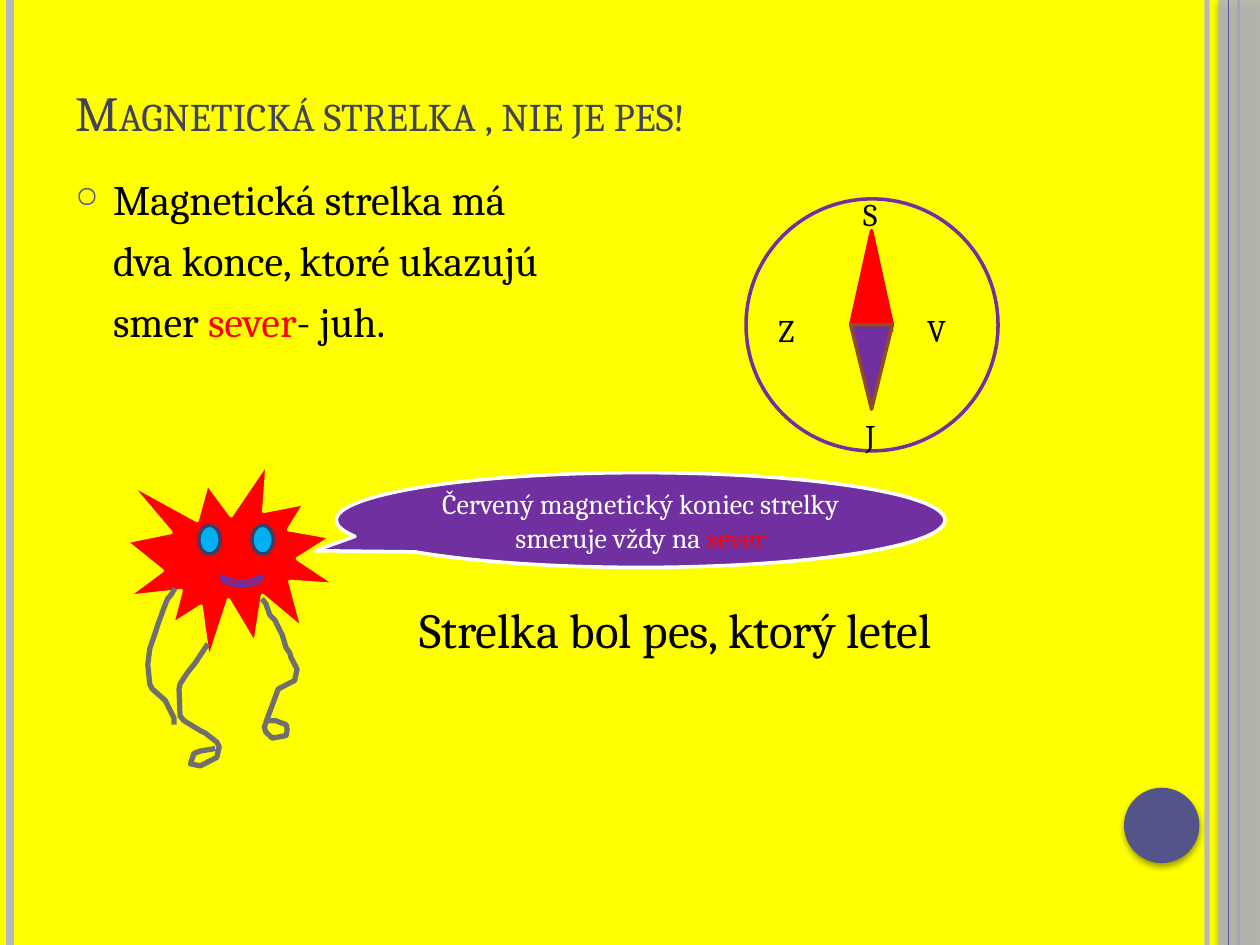
from dataclasses import dataclass

from lxml.etree import SubElement
from pptx import Presentation
from pptx.dml.color import RGBColor as Rgb
from pptx.enum.shapes import MSO_CONNECTOR as Connector, MSO_SHAPE as Shape
from pptx.enum.text import MSO_ANCHOR as Anchor, PP_ALIGN as Align
from pptx.oxml.ns import qn
from pptx.util import Cm, Pt


@dataclass(frozen=True)
class Theme:
    font: str = "Cambria"
    page: str = "FFFF00"
    ink: str = "000000"
    title: str = "424456"
    white: str = "FFFFFF"
    red: str = "FF0000"
    purple: str = "7030A0"
    brown: str = "934C22"
    rail: str = "B3B4C4"
    accent: str = "53548A"
    spark: str = "505188"
    eye: str = "00B0F0"
    eye_rim: str = "3D3E66"
    limb: str = "6F6F6F"
    title_size: int = 28
    body_size: int = 24
    label_size: int = 18
    speech_size: int = 16
    outline: float = 2


THEME = Theme()

LEFT_ARM = [
    (3.53, 11.86), (3.45, 11.99), (3.38, 12.07), (3.3, 12.27), (3.18, 12.6),
    (3.15, 12.7), (3.02, 13.08), (2.98, 13.4), (3.02, 13.79), (3.07, 13.89),
    (3.25, 14.05), (3.33, 14.12), (3.38, 14.22), (3.51, 14.48), (3.51, 14.61),
]
MIDDLE_LEG = [
    (4.19, 12.98), (4.06, 13.18), (3.94, 13.36), (3.78, 13.56), (3.63, 13.79),
    (3.61, 13.89), (3.63, 14.43), (3.71, 14.53), (4.04, 14.73), (4.14, 14.78),
    (4.27, 14.88), (4.37, 14.96), (4.42, 15.06), (4.37, 15.27), (4.04, 15.44),
    (3.84, 15.4), (3.91, 15.19), (4.04, 15.14), (4.34, 15.09),
]
RIGHT_ARM = [
    (5.28, 12.07), (5.36, 12.17), (5.44, 12.4), (5.54, 12.5), (5.69, 12.8),
    (5.77, 13.06), (5.84, 13.16), (5.87, 13.26), (5.99, 13.49), (5.94, 13.72),
    (5.84, 13.77), (5.61, 13.89), (5.41, 14.43), (5.33, 14.66), (5.36, 14.76),
    (5.49, 14.88), (5.77, 14.83), (5.79, 14.71), (5.77, 14.61), (5.56, 14.53),
    (5.33, 14.53),
]


def apply(target, formats):
    for name, value in formats.items():
        setattr(target, name, value)


def paint(figure, fill=None, line=None, width=THEME.outline):
    figure.shadow.inherit = False
    for part, colour in ((figure.fill, fill), (figure.line.fill, line)):
        if colour:
            part.solid()
            part.fore_color.rgb = Rgb.from_string(colour)
        else:
            part.background()
    if line:
        figure.line.width = Pt(width)


def add_figure(slide, kind, box, adjustments=(), **colours):
    figure = slide.shapes.add_shape(kind, *map(Cm, box))
    for index, value in enumerate(adjustments):
        figure.adjustments[index] = value
    paint(figure, **colours)
    return figure


def set_alpha(figure, percent):
    colour = figure.find(".//" + qn("a:srgbClr"))
    SubElement(colour, qn("a:alpha"), val=str(percent * 1000))


def add_shadow(figure):
    effects = figure._element.spPr.find(qn("a:effectLst"))
    shadow = SubElement(effects, qn("a:outerShdw"), blurRad=str(Pt(4)),
                        dist=str(Pt(2)), dir="5400000", rotWithShape="0")
    colour = SubElement(shadow, qn("a:srgbClr"), val=THEME.ink)
    SubElement(colour, qn("a:alpha"), val="38000")


def add_line(slide, start, end, colour, width):
    line = slide.shapes.add_connector(Connector.STRAIGHT, *map(Cm, start + end))
    line.line.color.rgb = Rgb.from_string(colour)
    line.line.width = Pt(width)
    SubElement(line._element.spPr, qn("a:effectLst"))
    return line


def add_limb(slide, points):
    start, *rest = [(Cm(x), Cm(y)) for x, y in points]
    builder = slide.shapes.build_freeform(*start)
    builder.add_line_segments(rest, close=False)
    paint(builder.convert_to_shape(), line=THEME.limb, width=3)


def add_run(paragraph, text, size, colour=THEME.ink):
    run = paragraph.add_run()
    run.text = text
    apply(run.font, {"name": THEME.font, "size": Pt(size)})
    run.font.color.rgb = Rgb.from_string(colour)
    return run


def add_text(slide, box, text, size, colour=THEME.ink, anchor=Anchor.TOP):
    frame = slide.shapes.add_textbox(*map(Cm, box)).text_frame
    apply(frame, {"word_wrap": True, "vertical_anchor": anchor})
    return add_run(frame.paragraphs[0], text, size, colour)


def add_bullet(properties):
    colour = SubElement(properties, qn("a:buClr"))
    SubElement(colour, qn("a:srgbClr"), val=THEME.accent)
    SubElement(properties, qn("a:buSzPct"), val="70000")
    SubElement(properties, qn("a:buChar"), char="○")


def add_frame(slide):
    for x, colour, width in ((24.33, THEME.rail, 3), (0.2, THEME.rail, 4.5),
                             (24.97, THEME.accent, 1.5)):
        rail = add_line(slide, (x, 0), (x, 19.05), colour, width)
        if width == 3:
            set_alpha(rail._element, 93)
    strip = add_figure(slide, Shape.RECTANGLE, (24.56, 0, 0.84, 19.05), fill=THEME.rail)
    set_alpha(strip._element, 87)
    add_shadow(strip)
    add_line(slide, (24.77, 0), (24.77, 19.05), THEME.accent, 0.75)
    add_shadow(add_figure(slide, Shape.OVAL, (22.66, 15.88, 1.52, 1.52), fill=THEME.accent))


def add_lesson(slide):
    heading = add_text(slide, (1.27, 0.76, 22.86, 2.21), "Magnetická strelka , nie je pes!",
                       THEME.title_size, THEME.title, Anchor.BOTTOM)
    heading.font._element.set("cap", "small")

    frame = slide.shapes.add_textbox(*map(Cm, (1.27, 3.38, 22.86, 13.64))).text_frame
    frame.word_wrap = True
    lines = (
        [("Magnetická strelka má", THEME.ink)],
        [("dva konce, ktoré ukazujú", THEME.ink)],
        [("smer ", THEME.ink), ("sever", THEME.red), ("- juh.", THEME.ink)],
    )
    for index, pieces in enumerate(lines):
        paragraph = frame.add_paragraph() if index else frame.paragraphs[0]
        paragraph.space_before = Pt(6)
        properties = paragraph._p.get_or_add_pPr()
        properties.set("marL", str(Cm(0.76)))
        if index == 0:
            properties.set("indent", str(-Cm(0.76)))
            add_bullet(properties)
        for text, colour in pieces:
            add_run(paragraph, text, THEME.body_size, colour)
    add_text(slide, (8.2, 11.96, 15.93, 1.4), "Strelka bol pes, ktorý letel", THEME.title_size)


def add_compass(slide):
    add_figure(slide, Shape.FLOWCHART_CONNECTOR, (15.04, 4.01, 5.08, 5.08), line=THEME.purple)
    add_line(slide, (17.98, 6.65), (18.01, 6.68), THEME.spark, 0.75)
    add_figure(slide, Shape.FLOWCHART_EXTRACT, (17.15, 4.65, 0.84, 1.9),
               fill=THEME.red, line=THEME.red)
    add_figure(slide, Shape.FLOWCHART_MERGE, (17.15, 6.55, 0.84, 1.7),
               fill=THEME.purple, line=THEME.brown)
    for letter, x, y in (("S", 17.15, 3.81), ("Z", 15.44, 6.15),
                         ("V", 18.44, 6.15), ("J", 17.2, 8.26)):
        add_text(slide, (x, y, 1.07, 1.02), letter, THEME.label_size)


def add_speech(slide):
    bubble = add_figure(slide, Shape.OVAL_CALLOUT, (6.78, 9.53, 12.27, 1.91),
                        (-0.535, 0.324), fill=THEME.purple, line=THEME.white)
    apply(bubble.text_frame, {"word_wrap": True, "vertical_anchor": Anchor.MIDDLE})
    sentence = bubble.text_frame.paragraphs[0]
    sentence.alignment = Align.CENTER
    add_run(sentence, "Červený magnetický koniec strelky smeruje vždy na ",
            THEME.speech_size, THEME.white)
    add_run(sentence, "sever", THEME.speech_size, THEME.red)


def add_creature(slide):
    add_figure(slide, Shape.EXPLOSION1, (2.54, 9.32, 4.24, 4.01),
               fill=THEME.red, line=THEME.page)
    for limb in (MIDDLE_LEG, RIGHT_ARM):
        add_limb(slide, limb)
    for x in (4.01, 5.08):
        add_figure(slide, Shape.FLOWCHART_CONNECTOR, (x, 10.59, 0.43, 0.58),
                   fill=THEME.eye, line=THEME.eye_rim)
    smile = add_figure(slide, Shape.BLOCK_ARC, (4.45, 11.43, 0.84, 0.38), (108, 0, 0.25),
                       fill=THEME.red, line=THEME.purple)
    smile._element.spPr.xfrm.set("flipV", "1")
    add_limb(slide, LEFT_ARM)


def main():
    deck = Presentation()
    apply(deck, {"slide_width": Cm(25.4), "slide_height": Cm(19.05)})
    slide = deck.slides.add_slide(deck.slide_layouts[6])
    slide.background.fill.solid()
    slide.background.fill.fore_color.rgb = Rgb.from_string(THEME.page)
    for add_part in (add_frame, add_lesson, add_compass, add_speech, add_creature):
        add_part(slide)
    deck.save("out.pptx")


if __name__ == "__main__":
    main()
